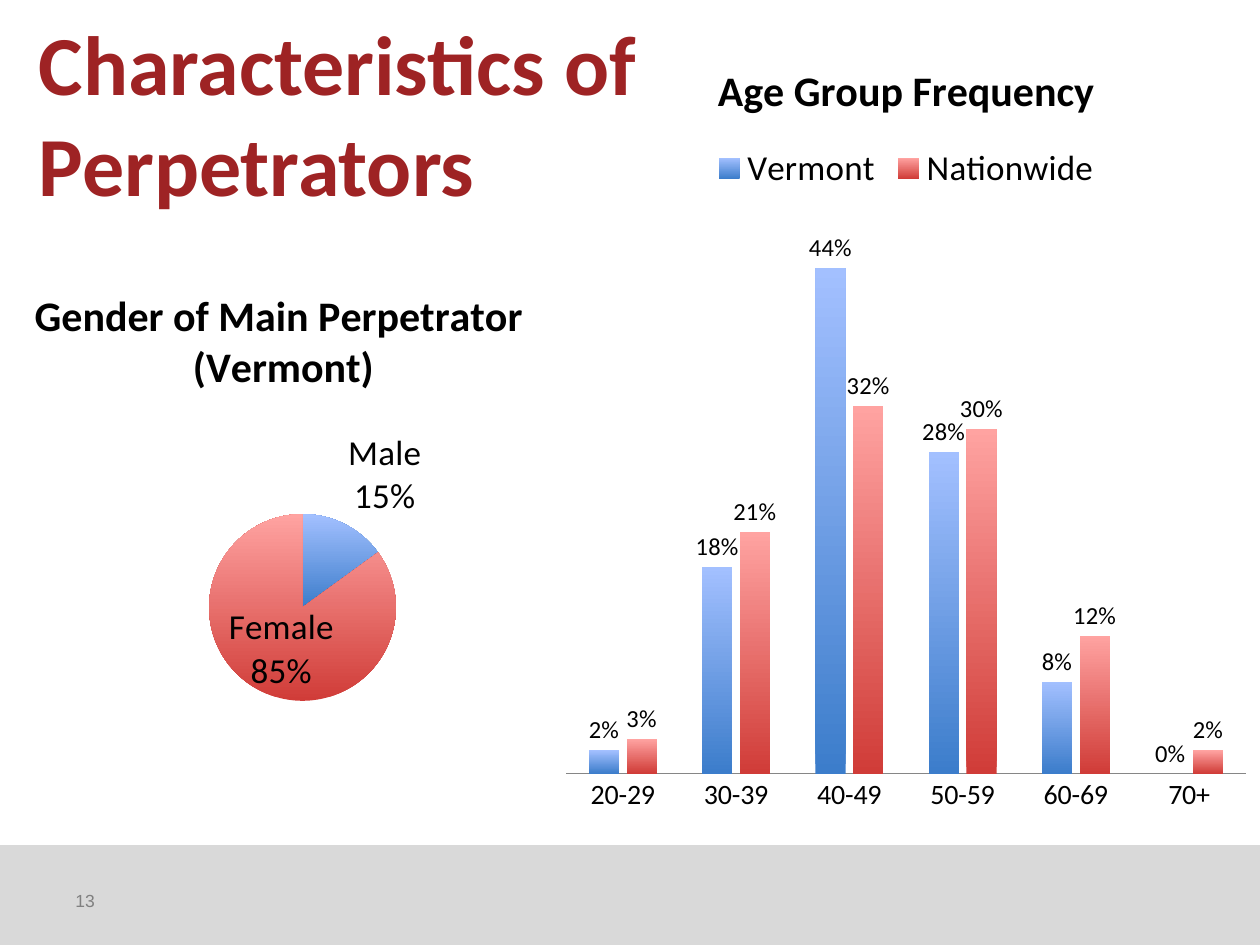
from dataclasses import dataclass

import pptx
import pptx.chart.data
import pptx.dml.color
import pptx.enum.chart
import pptx.enum.shapes
import pptx.enum.text
import pptx.oxml
import pptx.util

Pt = pptx.util.Pt
LabelPosition = pptx.enum.chart.XL_LABEL_POSITION

COLORS = {
    "title": "9E2324", "band": "D9D9D9", "number": "808080", "text": "000000", "axis": "868686",
    "blue_dark": "3C7DCB", "blue_light": "A3C0FF",
    "red_dark": "D03C38", "red_light": "FFA3A1",
}


@dataclass
class Box:
    left: float
    top: float
    width: float
    height: float

    def lengths(self) -> tuple:
        return tuple(Pt(n) for n in (self.left, self.top, self.width, self.height))


@dataclass
class Layout:
    """Plot area as fractions of the chart."""
    x: float
    y: float
    w: float
    h: float


@dataclass
class AgeSeries:
    name: str
    shares: tuple
    hue: str


@dataclass
class GenderSlice:
    code: str
    label: str
    percent: int
    hue: str
    position: LabelPosition


AGE_GROUPS = ("20-29", "30-39", "40-49", "50-59", "60-69", "70+")
AGE_SERIES = (
    AgeSeries("Vermont", (0.02, 0.18, 0.44, 0.28, 0.08, 0), "blue"),
    AgeSeries("Nationwide", (0.03, 0.21, 0.32, 0.30, 0.12, 0.02), "red"),
)
GENDER_SLICES = (
    GenderSlice("M", "Male", 15, "blue", LabelPosition.OUTSIDE_END),
    GenderSlice("F", "Female", 85, "red", LabelPosition.CENTER),
)


def rgb(name: str) -> pptx.dml.color.RGBColor:
    return pptx.dml.color.RGBColor.from_string(COLORS[name])


def style_font(font, size: float, color: str = "text", name: str = "Calibri", bold: bool = False) -> None:
    font.size, font.name, font.bold = Pt(size), name, bold
    font.color.rgb = rgb(color)


def write_text(frame, *lines: str, **style) -> None:
    """Put one paragraph per line into a text frame, all in one format."""
    for index, line in enumerate(lines):
        paragraph = frame.paragraphs[0] if index == 0 else frame.add_paragraph()
        run = paragraph.add_run()
        run.text = line
        style_font(run.font, **style)


def fill_gradient(fill, hue: str) -> None:
    fill.gradient()
    fill.gradient_angle = 90
    for stop, shade in zip(fill.gradient_stops, ("dark", "light")):
        stop.color.rgb = rgb(f"{hue}_{shade}")


def place_plot(chart, layout: Layout) -> None:
    plot_area = chart.plots[0]._element.getparent()
    for old in plot_area.findall(pptx.oxml.ns.qn("c:layout")):
        plot_area.remove(old)
    plot_area.insert(0, pptx.oxml.parse_xml(
        f'<c:layout {pptx.oxml.ns.nsdecls("c")}><c:manualLayout><c:layoutTarget val="inner"/>'
        f'<c:xMode val="edge"/><c:yMode val="edge"/><c:x val="{layout.x}"/><c:y val="{layout.y}"/>'
        f'<c:w val="{layout.w}"/><c:h val="{layout.h}"/></c:manualLayout></c:layout>'))


def add_chart(slide, kind, box: Box, data, title: tuple, layout: Layout):
    chart = slide.shapes.add_chart(kind, *box.lengths(), data).chart
    style_font(chart.font, 10)
    chart.has_title = True
    write_text(chart.chart_title.text_frame, *title, size=24, bold=True)
    place_plot(chart, layout)
    return chart


def add_gender_pie(slide) -> None:
    data = pptx.chart.data.CategoryChartData()
    data.categories = [part.code for part in GENDER_SLICES]
    data.add_series("Series 1", [part.percent for part in GENDER_SLICES])
    chart = add_chart(slide, pptx.enum.chart.XL_CHART_TYPE.PIE, Box(-56, 153.5, 436, 305), data,
                      ("Gender of Main Perpetrator ", "(Vermont)"), Layout(0.4, 0.46, 0.25, 0.35))
    chart.has_legend = False
    series = chart.plots[0].series[0]

    # Labels keep each word on one line, for the series and for each slice
    style_font(series.data_labels.font, 20)
    for body in series.data_labels._element.iter(pptx.oxml.ns.qn("a:bodyPr")):
        body.set("wrap", "none")
    for index, part in enumerate(GENDER_SLICES):
        point = series.points[index]
        fill_gradient(point.format.fill, part.hue)
        label = point.data_label
        label.text_frame.word_wrap = False
        write_text(label.text_frame, part.label, f"{part.percent}%", size=20)
        label.position = part.position


def add_age_columns(slide) -> None:
    data = pptx.chart.data.CategoryChartData(number_format="0%")
    data.categories = AGE_GROUPS
    for group in AGE_SERIES:
        data.add_series(group.name, group.shares)
    chart = add_chart(slide, pptx.enum.chart.XL_CHART_TYPE.COLUMN_CLUSTERED, Box(315.5, 18, 404.5, 456),
                      data, ("Age Group Frequency",), Layout(0.02, 0.21, 0.96, 0.72))

    # Legend and axes
    chart.has_legend = True
    chart.legend.position = pptx.enum.chart.XL_LEGEND_POSITION.TOP
    chart.legend.include_in_layout = False
    style_font(chart.legend.font, 20)
    ages, shares = chart.category_axis, chart.value_axis
    ages.major_tick_mark = pptx.enum.chart.XL_TICK_MARK.NONE
    ages.format.line.color.rgb = rgb("axis")
    style_font(ages.tick_labels.font, 16)
    shares.visible = False
    shares.has_major_gridlines = False
    shares.minimum_scale, shares.maximum_scale = 0, 0.5

    # Columns and their labels
    plot = chart.plots[0]
    plot.vary_by_categories = False
    plot.gap_width, plot.overlap = 150, -25
    for series, group in zip(plot.series, AGE_SERIES):
        fill_gradient(series.format.fill, group.hue)
        labels = series.data_labels
        labels.show_value = True
        labels.number_format, labels.number_format_is_linked = "0%", False
        labels.position = LabelPosition.OUTSIDE_END
        style_font(labels.font, 14)


def add_footer(slide) -> None:
    band = slide.shapes.add_shape(pptx.enum.shapes.MSO_SHAPE.RECTANGLE, *Box(0, 483, 720, 57).lengths())
    band.shadow.inherit = False
    band.fill.solid()
    band.fill.fore_color.rgb = band.line.color.rgb = rgb("band")
    band.line.width = Pt(0.75)
    number = slide.shapes.add_textbox(*Box(36, 500.5, 168, 28.75).lengths()).text_frame
    number.word_wrap = True
    number.vertical_anchor = pptx.enum.text.MSO_ANCHOR.MIDDLE
    write_text(number, "13", size=10, color="number", name="Arial")


def add_title(slide) -> None:
    title = slide.shapes.title
    title.left, title.top, title.width, title.height = Box(15, 3, 381, 124).lengths()
    frame = title.text_frame
    frame.word_wrap = True
    frame.auto_size = pptx.enum.text.MSO_AUTO_SIZE.NONE
    frame.vertical_anchor = pptx.enum.text.MSO_ANCHOR.TOP
    write_text(frame, "Characteristics of Perpetrators", size=48, color="title", bold=True)
    frame.paragraphs[0].alignment = pptx.enum.text.PP_ALIGN.LEFT


def main() -> None:
    presentation = pptx.Presentation()
    presentation.slide_width, presentation.slide_height = Pt(720), Pt(540)
    slide = presentation.slides.add_slide(presentation.slide_layouts[5])
    add_footer(slide)
    add_gender_pie(slide)
    add_age_columns(slide)
    add_title(slide)
    presentation.save("out.pptx")


if __name__ == "__main__":
    main()
